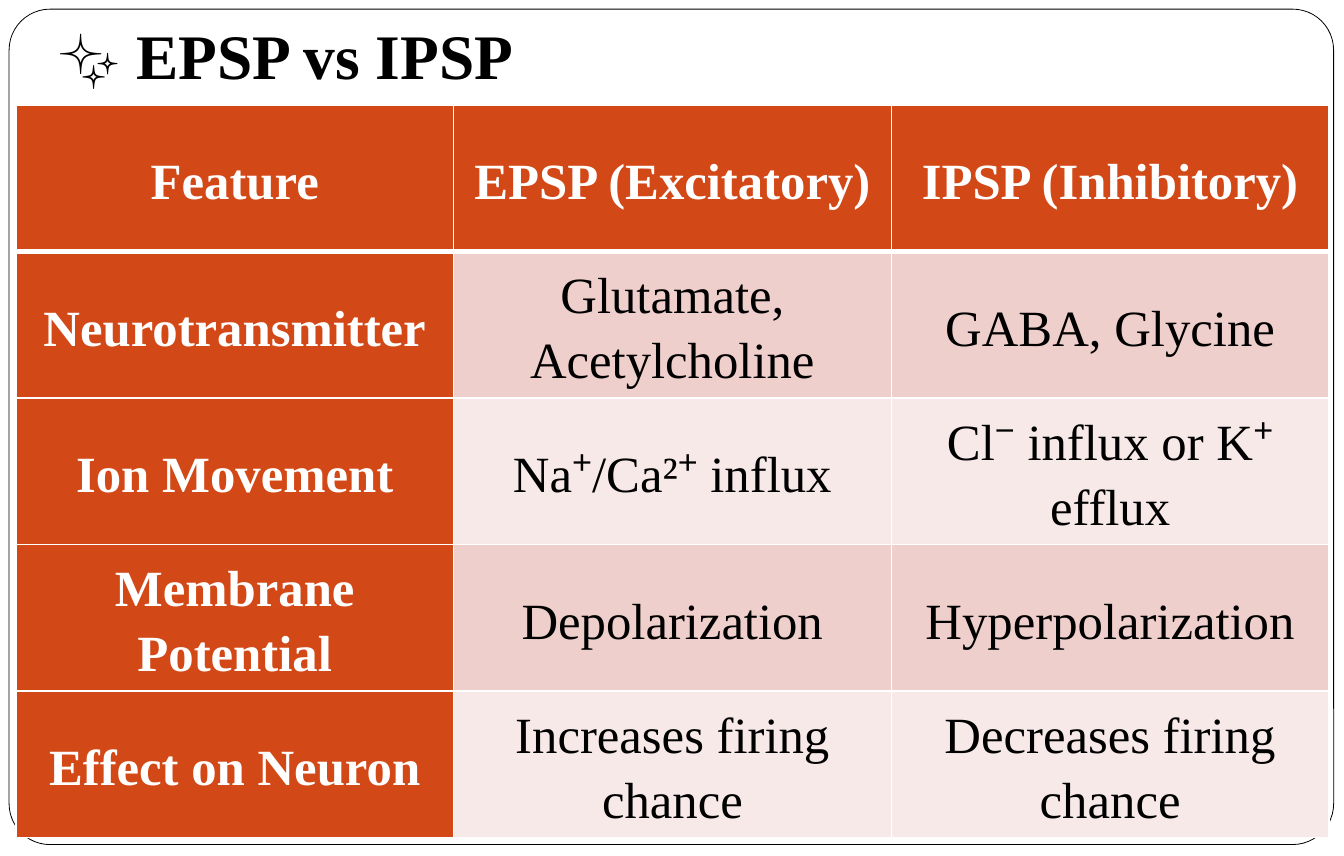
from lxml import etree
from pptx import Presentation
from pptx import util as u
from pptx.dml.color import RGBColor
from pptx.enum import shapes, text
from pptx.oxml.ns import qn

COLORS = {"white": "FFFFFF", "black": "000000", "accent": "D34817",
          "band_dark": "EFCFCC", "band_light": "F7E9E8"}

ROWS = [
    ("Feature", "EPSP (Excitatory)", "IPSP (Inhibitory)"),
    ("Neurotransmitter", "Glutamate, Acetylcholine", "GABA, Glycine"),
    ("Ion Movement", "Na⁺/Ca²⁺ influx", "Cl⁻ influx or K⁺ efflux"),
    ("Membrane Potential", "Depolarization", "Hyperpolarization"),
    ("Effect on Neuron", "Increases firing chance", "Decreases firing chance"),
]


def rgb(name):
    return RGBColor.from_string(COLORS[name])


def set_all(obj, values):
    for key, value in values.items():
        setattr(obj, key, value)


class Deck:
    font = "Times New Roman"

    def __init__(self, width, height):
        self.prs = Presentation()
        set_all(self.prs, {"slide_width": u.Inches(width),
                           "slide_height": u.Inches(height)})
        self.s = self.prs.slides.add_slide(self.prs.slide_layouts[5])

    def add_words(self, p, words, size, color, bold, **para):
        set_all(p, para)
        r = p.add_run()
        r.text = words
        set_all(r.font, {"name": self.font, "size": u.Pt(size), "bold": bold})
        r.font.color.rgb = rgb(color)

    def panel(self, box, radius):
        sp = self.s.shapes.add_shape(shapes.MSO_SHAPE.ROUNDED_RECTANGLE,
                                     *map(u.Inches, box))
        sp.adjustments[0] = radius
        sp.shadow.inherit = False
        sp.fill.solid()
        sp.fill.fore_color.rgb = rgb("white")
        sp.line.color.rgb = rgb("black")
        sp.line.width = u.Pt(0.5)
        # Send behind the title
        sp.element.getparent().insert(2, sp.element)

    def title(self, box, words):
        sp = self.s.shapes.title
        set_all(sp, dict(zip(("left", "top", "width", "height"),
                             map(u.Inches, box))))
        tf = sp.text_frame
        set_all(tf, {"vertical_anchor": text.MSO_ANCHOR.BOTTOM,
                     "auto_size": text.MSO_AUTO_SIZE.NONE, "word_wrap": True,
                     "margin_left": u.Inches(0.1), "margin_right": u.Inches(0.1),
                     "margin_top": u.Inches(0.05), "margin_bottom": u.Inches(0.1)})
        self.add_words(tf.paragraphs[0], words, 40, "black", True,
                       alignment=text.PP_ALIGN.LEFT)

    def borders(self, cell, widths):
        tcPr = cell._tc.get_or_add_tcPr()
        for side, width in widths.items():
            ln = etree.SubElement(tcPr, qn(f"a:ln{side}"), w=str(u.Pt(width)))
            fill = etree.SubElement(ln, qn("a:solidFill"))
            etree.SubElement(fill, qn("a:srgbClr"), val=COLORS["white"])

    def table(self, box, rows):
        tbl = self.s.shapes.add_table(len(rows), len(rows[0]),
                                      *map(u.Inches, box)).table
        margins = {f"margin_{side}": u.Inches(0.01)
                   for side in ("left", "right", "top", "bottom")}
        for i, row in enumerate(rows):
            for j, words in enumerate(row):
                cell = tbl.cell(i, j)
                heading = i == 0 or j == 0
                # A thick rule separates the header row
                self.borders(cell, {"L": 1, "R": 1, "T": 3 if i == 1 else 1,
                                    "B": 3 if i == 0 else 1})
                band = "band_dark" if i % 2 else "band_light"
                cell.fill.solid()
                cell.fill.fore_color.rgb = rgb("accent" if heading else band)
                set_all(cell, {"vertical_anchor": text.MSO_ANCHOR.MIDDLE, **margins})
                self.add_words(cell.text_frame.paragraphs[0], words, 32,
                               "white" if heading else "black", heading,
                               alignment=text.PP_ALIGN.CENTER,
                               line_spacing=1.15, space_after=u.Pt(8))


def main():
    deck = Deck(11.77, 7.5)
    # Frame and heading
    deck.panel((0.08, 0.08, 11.6, 7.32), 0.049)
    deck.title((0.4, 0.08, 10.6, 0.83), "✨ EPSP vs IPSP")
    # Comparison
    deck.table((0.14, 0.92, 11.5, 6.42), ROWS)
    deck.prs.save("out.pptx")


if __name__ == "__main__":
    main()
